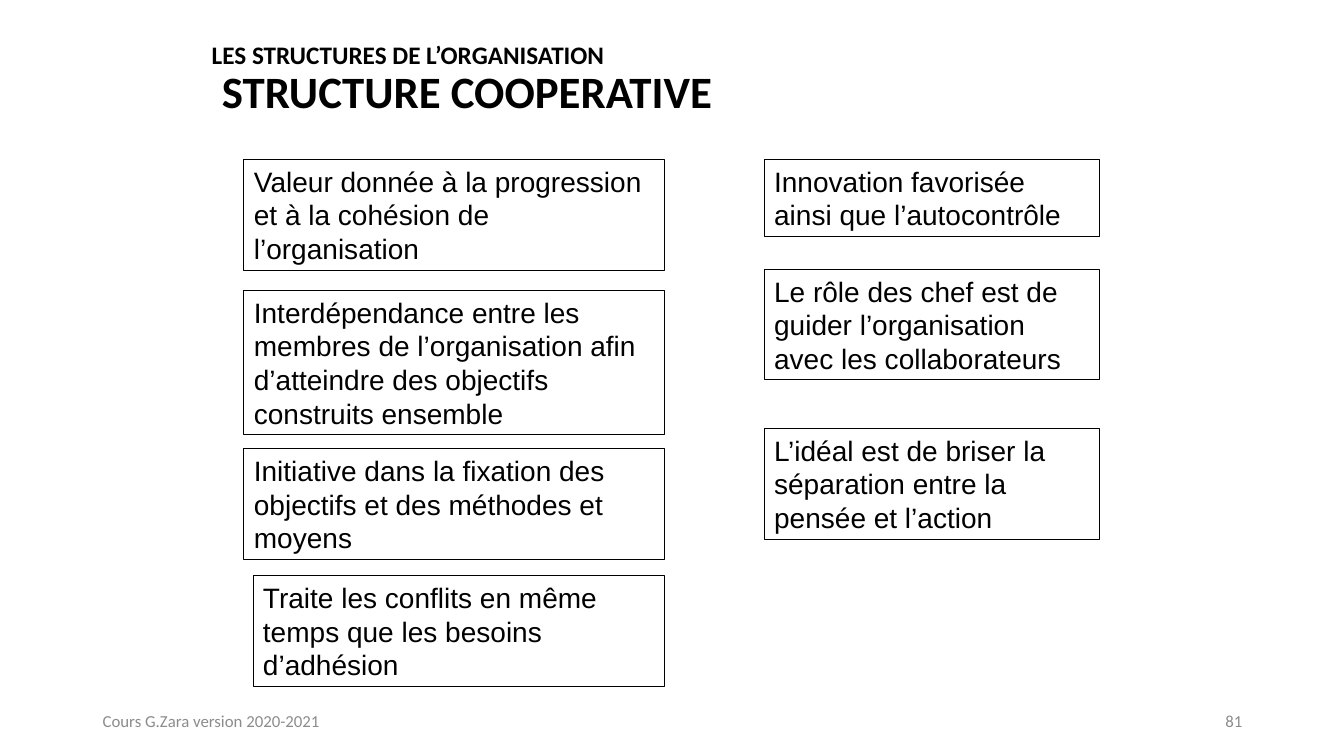
from dataclasses import dataclass

from pptx import Presentation
from pptx.dml.color import RGBColor
from pptx.enum.shapes import MSO_SHAPE
from pptx.enum.text import MSO_ANCHOR as Anchor, MSO_AUTO_SIZE as AutoSize, PP_ALIGN as Align
from pptx.util import Inches, Pt


@dataclass(frozen=True)
class Theme:
    ink: RGBColor = RGBColor(0, 0, 0)
    muted: RGBColor = RGBColor(0x8C, 0x8C, 0x8C)
    heading_font: str = "Calibri"
    body_font: str = "Arial"
    chapter: Pt = Pt(18)
    headline: Pt = Pt(32)
    body: Pt = Pt(20)
    footer: Pt = Pt(12)
    outline: Pt = Pt(0.75)


def place(part, left, top, width, height):
    part.left, part.top = Inches(left), Inches(top)
    part.width, part.height = Inches(width), Inches(height)


def set_font(paragraph, name, size, color):
    font = paragraph.font
    font.name, font.size = name, size
    font.color.rgb = color


theme = Theme()
deck = Presentation()
deck.slide_width, deck.slide_height = Inches(13.33), Inches(7.5)
slide = deck.slides.add_slide(deck.slide_layouts[5])

title = slide.shapes.title
place(title, 2, 0.17, 9, 1.25)
title.text_frame.word_wrap = True
title.text_frame.auto_size = AutoSize.NONE
title.text_frame.vertical_anchor = Anchor.MIDDLE
heading = title.text_frame.paragraphs[0]
heading.alignment = Align.LEFT
heading.line_spacing = 0.9
set_font(heading, theme.heading_font, theme.chapter, theme.ink)
heading.font.bold = True
heading.add_run().text = "LES STRUCTURES DE L’ORGANISATION"
heading.add_line_break()
headline = heading.add_run()
headline.text = " STRUCTURE COOPERATIVE"
headline.font.size = theme.headline

LEFT_COLUMN, LEFT_EDGE = 2.42, 6.59
RIGHT_COLUMN, RIGHT_EDGE = 7.58, 10.91
INDENT = 0.09
LINE_HEIGHT, PADDING = 1 / 3, 0.1

principles = [
    (LEFT_COLUMN, LEFT_EDGE, 1.58, 3,
     "Valeur donnée à la progression et à la cohésion de l’organisation"),
    (LEFT_COLUMN, LEFT_EDGE, 2.88, 4,
     "Interdépendance entre les membres de l’organisation afin d’atteindre des objectifs construits ensemble"),
    (LEFT_COLUMN, LEFT_EDGE, 4.45, 3,
     "Initiative dans la fixation des objectifs et des méthodes et moyens"),
    (LEFT_COLUMN + INDENT, LEFT_EDGE, 5.71, 3,
     "Traite les conflits en même temps que les besoins d’adhésion"),
    (RIGHT_COLUMN, RIGHT_EDGE, 1.58, 2,
     "Innovation favorisée ainsi que l’autocontrôle"),
    (RIGHT_COLUMN, RIGHT_EDGE, 2.67, 3,
     "Le rôle des chef est de guider l’organisation avec les collaborateurs"),
    (RIGHT_COLUMN, RIGHT_EDGE, 4.25, 3,
     "L’idéal est de briser la séparation entre la pensée et l’action"),
]
for left, right, top, lines, wording in principles:
    principle = slide.shapes.add_shape(MSO_SHAPE.RECTANGLE, 0, 0, 0, 0)
    place(principle, left, top, right - left, lines * LINE_HEIGHT + PADDING)
    principle.shadow.inherit = False
    principle.fill.background()
    principle.line.color.rgb = theme.ink
    principle.line.width = theme.outline
    frame = principle.text_frame
    frame.text = wording
    frame.word_wrap = True
    frame.auto_size = AutoSize.SHAPE_TO_FIT_TEXT
    frame.vertical_anchor = Anchor.TOP
    frame.paragraphs[0].alignment = Align.LEFT
    set_font(frame.paragraphs[0], theme.body_font, theme.body, theme.ink)

for left, alignment, wording in [
    (0.92, Align.LEFT, "Cours G.Zara version 2020-2021"),
    (9.42, Align.RIGHT, "81"),
]:
    footer = slide.shapes.add_textbox(0, 0, 0, 0)
    place(footer, left, 6.95, 3, 0.4)
    frame = footer.text_frame
    frame.text = wording
    frame.word_wrap = True
    frame.vertical_anchor = Anchor.MIDDLE
    frame.paragraphs[0].alignment = alignment
    set_font(frame.paragraphs[0], theme.heading_font, theme.footer, theme.muted)

deck.save("out.pptx")
